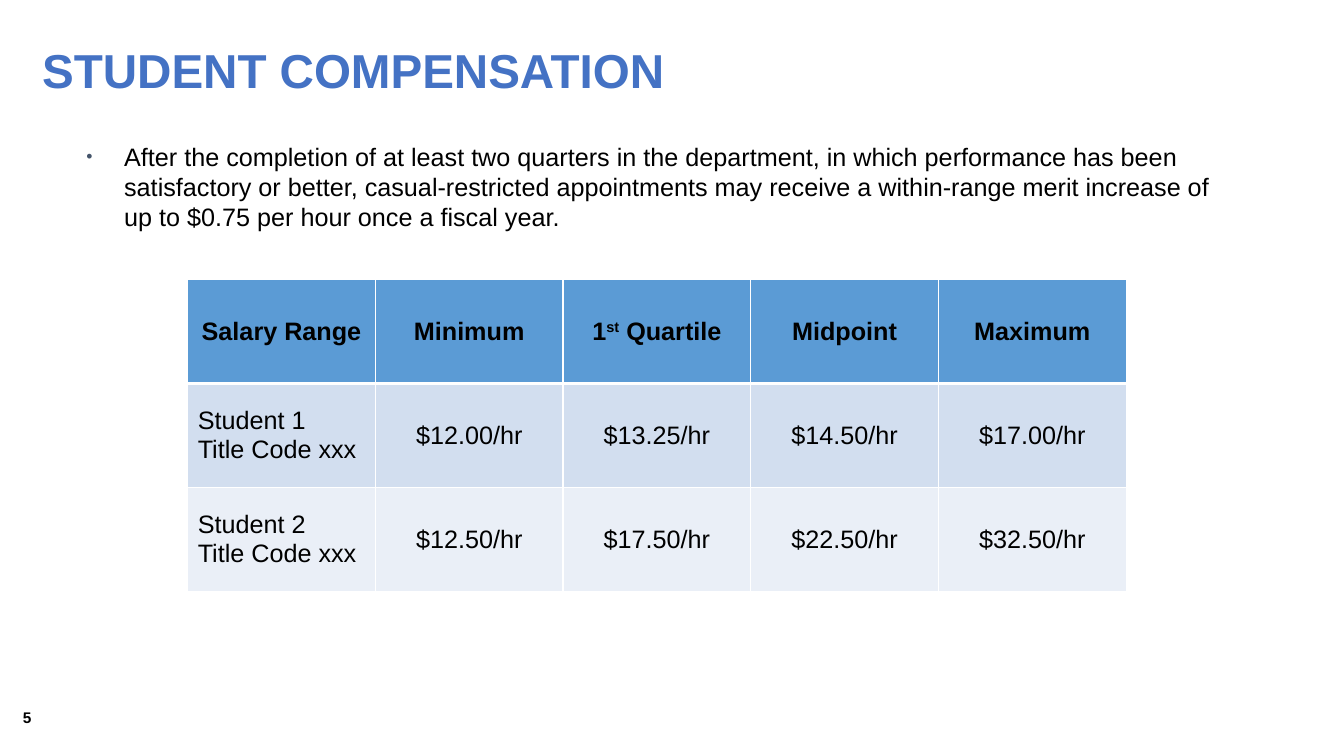
from dataclasses import dataclass

from lxml import etree
from pptx import Presentation
from pptx.dml.color import RGBColor
from pptx.enum.text import MSO_ANCHOR, MSO_AUTO_SIZE, PP_ALIGN
from pptx.oxml.ns import qn
from pptx.util import Cm, Pt

MIDDLE, TOP = MSO_ANCHOR.MIDDLE, MSO_ANCHOR.TOP
LEFT, CENTER = PP_ALIGN.LEFT, PP_ALIGN.CENTER
NO_AUTOFIT = MSO_AUTO_SIZE.NONE
TITLE_ONLY = 5


@dataclass(frozen=True)
class Theme:
    font: str = "Arial"
    title: str = "4472C4"
    text: str = "000000"
    bullet: str = "44546A"
    border: str = "FFFFFF"
    row_fills: tuple = ("5B9BD5", "D2DEEF", "EAEFF7")
    title_size: int = 34
    body_size: int = 18
    number_size: int = 11


THEME = Theme()

MERIT_RULE = (
    "After the completion of at least two quarters in the department, in which "
    "performance has been satisfactory or better, casual-restricted appointments "
    "may receive a within-range merit increase of up to $0.75 per hour once a "
    "fiscal year."
)
SALARY_ROWS = [
    ["Salary Range", "Minimum", "1st Quartile", "Midpoint", "Maximum"],
    ["Student 1\nTitle Code xxx", "$12.00/hr", "$13.25/hr", "$14.50/hr", "$17.00/hr"],
    ["Student 2\nTitle Code xxx", "$12.50/hr", "$17.50/hr", "$22.50/hr", "$32.50/hr"],
]
QUARTILE_PARTS = ["1", "st", " Quartile"]
COLUMN_WIDTH, ROW_HEIGHT = Cm(4.73), Cm(2.62)


def format_text(frame, size, color=THEME.text, bold=False, align=LEFT):
    for paragraph in frame.paragraphs:
        paragraph.alignment = align
        for run in paragraph.runs:
            run.font.name = THEME.font
            run.font.size = Pt(size)
            run.font.bold = bold
            run.font.color.rgb = RGBColor.from_string(color)


def place(shape, left, top, width, height):
    shape.left, shape.top = Cm(left), Cm(top)
    shape.width, shape.height = Cm(width), Cm(height)


def add_title(slide, text):
    title = slide.shapes.title
    place(title, 0.81, 0.69, 33.05, 2.29)
    frame = title.text_frame
    frame.text = text
    frame.auto_size = NO_AUTOFIT
    frame.vertical_anchor = MIDDLE
    frame.paragraphs[0].line_spacing = 0.9
    format_text(frame, THEME.title_size, THEME.title, bold=True)


def add_text(slide, box, text, size, bold=False, anchor=TOP):
    frame = slide.shapes.add_textbox(*map(Cm, box)).text_frame
    frame.word_wrap = True
    frame.vertical_anchor = anchor
    frame.text = text
    format_text(frame, size, bold=bold)
    return frame.paragraphs[0]


def add_bullet(paragraph):
    paragraph.space_before = Pt(12)
    properties = paragraph._p.get_or_add_pPr()
    indent = Cm(0.95)
    properties.set("marL", str(indent))
    properties.set("indent", str(-indent))
    color = etree.SubElement(properties, qn("a:buClr"))
    etree.SubElement(color, qn("a:srgbClr"), val=THEME.bullet)
    etree.SubElement(properties, qn("a:buSzPct"), val="70000")
    etree.SubElement(properties, qn("a:buFont"), typeface=THEME.font)
    etree.SubElement(properties, qn("a:buChar"), char="•")


def add_borders(cell, top, bottom):
    """Draw all four sides; top and bottom are line widths in points."""
    properties = cell._tc.get_or_add_tcPr()
    for side, width in (("lnL", 1), ("lnR", 1), ("lnT", top), ("lnB", bottom)):
        line = etree.SubElement(properties, qn(f"a:{side}"), w=str(Pt(width)))
        fill = etree.SubElement(line, qn("a:solidFill"))
        etree.SubElement(fill, qn("a:srgbClr"), val=THEME.border)


def raise_ordinal(paragraph, parts):
    """Split the text into three runs, the middle one as superscript."""
    paragraph.text = ""
    runs = [paragraph.add_run() for _ in parts]
    for run, part in zip(runs, parts):
        run.text = part
    runs[1]._r.get_or_add_rPr().set("baseline", "30000")


def add_salary_table(slide):
    row_count, column_count = len(SALARY_ROWS), len(SALARY_ROWS[0])
    table = slide.shapes.add_table(
        row_count, column_count, Cm(4.73), Cm(7.04),
        COLUMN_WIDTH * column_count, ROW_HEIGHT * row_count,
    ).table
    for row_index, values in enumerate(SALARY_ROWS):
        is_header = row_index == 0
        for column_index, value in enumerate(values):
            cell = table.cell(row_index, column_index)
            cell.text = value
            cell.vertical_anchor = MIDDLE
            if value == "".join(QUARTILE_PARTS):
                raise_ordinal(cell.text_frame.paragraphs[0], QUARTILE_PARTS)
            is_label = column_index == 0 and not is_header
            format_text(cell.text_frame, THEME.body_size, bold=is_header,
                        align=LEFT if is_label else CENTER)
            add_borders(cell, top=3 if row_index == 1 else 1,
                        bottom=3 if is_header else 1)
            cell.fill.solid()
            cell.fill.fore_color.rgb = RGBColor.from_string(THEME.row_fills[row_index])


def main():
    presentation = Presentation()
    presentation.slide_width, presentation.slide_height = Cm(33.87), Cm(19.05)
    slide = presentation.slides.add_slide(presentation.slide_layouts[TITLE_ONLY])
    add_title(slide, "STUDENT COMPENSATION")
    merit_rule = add_text(slide, (1.93, 3.43, 29.21, 3.61), MERIT_RULE, THEME.body_size)
    add_bullet(merit_rule)
    add_salary_table(slide)
    add_text(slide, (0.33, 17.65, 7.9, 0.84), "5", THEME.number_size,
             bold=True, anchor=MIDDLE)
    presentation.save("out.pptx")


if __name__ == "__main__":
    main()
